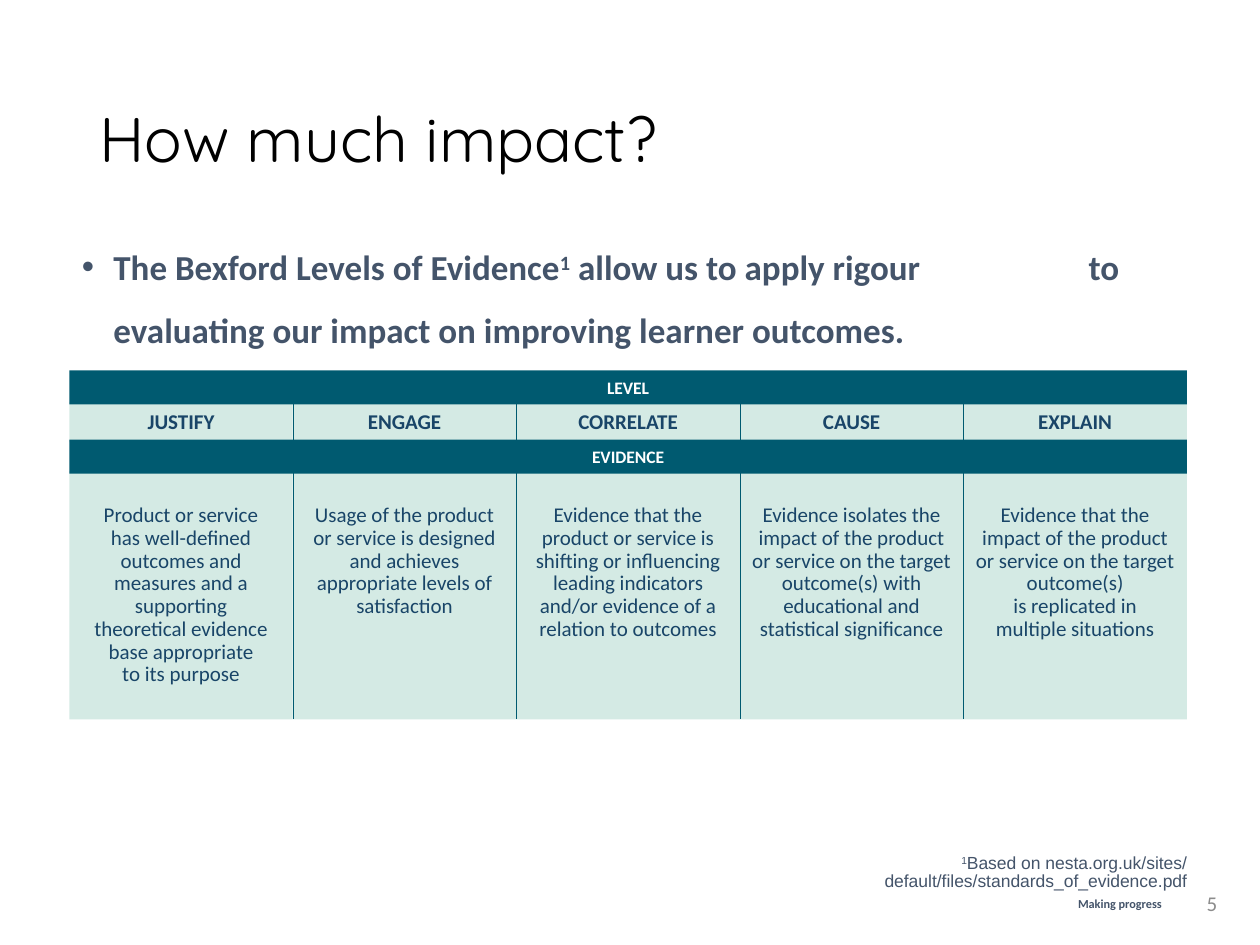
import pptx
import pptx.util
import pptx.dml.color
import pptx.enum.shapes
import pptx.enum.text
import pptx.oxml
import pptx.oxml.ns
from pptx.util import Inches

RGBColor = pptx.dml.color.RGBColor
ALIGN = pptx.enum.text.PP_ALIGN
ANCHOR = pptx.enum.text.MSO_ANCHOR

TEAL = RGBColor(0x00, 0x5A, 0x70)
MINT = RGBColor(0xD4, 0xEA, 0xE4)
NAVY = RGBColor(0x19, 0x45, 0x68)
SLATE = RGBColor(0x44, 0x54, 0x6A)
GREY = RGBColor(0x8C, 0x8C, 0x8C)
BLACK = RGBColor(0x00, 0x00, 0x00)
WHITE = RGBColor(0xFF, 0xFF, 0xFF)

TABLE_LEFT, TABLE_WIDTH = 0.55, 8.87
LEVELS = [
    ("JUSTIFY", ["Product or service",
                 "has well-defined outcomes and measures and a supporting",
                 "theoretical evidence", "base appropriate", "to its purpose"]),
    ("ENGAGE", ["Usage of the product or service is designed and achieves "
                "appropriate levels of satisfaction"]),
    ("CORRELATE", ["Evidence that the product or service is shifting or influencing "
                   "leading indicators and/or evidence of a", "relation to outcomes"]),
    ("CAUSE", ["Evidence isolates the impact of the product or service on the target "
               "outcome(s) with educational and statistical significance"]),
    ("EXPLAIN", ["Evidence that the impact of the product or service on the "
                 "target outcome(s)", "is replicated in multiple situations"]),
]
COLUMN_WIDTH = TABLE_WIDTH / len(LEVELS)


def place(shape, left, top, width, height):
    """Move and size a shape, in inches."""
    shape.left, shape.top = Inches(left), Inches(top)
    shape.width, shape.height = Inches(width), Inches(height)


def set_frame(shape, anchor, insets=(0.1, 0.05, 0.1, 0.05)):
    """Set wrapping, anchor and insets of a shape's text and return its frame."""
    frame = shape.text_frame
    frame.word_wrap = True
    frame.auto_size = pptx.enum.text.MSO_AUTO_SIZE.NONE
    frame.vertical_anchor = anchor
    (frame.margin_left, frame.margin_top,
     frame.margin_right, frame.margin_bottom) = map(Inches, insets)
    return frame


def format_paragraph(paragraph, size, color, bold=False, font="Calibri",
                     align=ALIGN.LEFT, spacing=None):
    """Set alignment, line spacing and font of a paragraph."""
    paragraph.alignment = align
    paragraph.line_spacing = spacing
    paragraph.font.name = font
    paragraph.font.size = pptx.util.Pt(size)
    paragraph.font.bold = bold
    paragraph.font.color.rgb = color


def add_run(paragraph, text, superscript=False):
    """Append a run, raised if it is a superscript."""
    run = paragraph.add_run()
    run.text = text
    if superscript:
        run.font._element.set("baseline", "30000")


def add_cell(slide, box, fill, lines, size, color, bold=False, spacing=None,
             anchor=ANCHOR.MIDDLE, insets=(0.1, 0, 0.1, 0)):
    """Add a filled rectangle with centred paragraphs."""
    shape = slide.shapes.add_shape(
        pptx.enum.shapes.MSO_SHAPE.RECTANGLE, *map(Inches, box))
    shape.shadow.inherit = False
    shape.fill.solid()
    shape.fill.fore_color.rgb = fill
    shape.line.fill.background()
    frame = set_frame(shape, anchor, insets)
    for index, line in enumerate(lines):
        paragraph = frame.add_paragraph() if index else frame.paragraphs[0]
        add_run(paragraph, line)
        format_paragraph(paragraph, size, color, bold, align=ALIGN.CENTER, spacing=spacing)


def add_divider(slide, x, top, bottom):
    """Add a thin vertical line between two columns."""
    line = slide.shapes.add_connector(
        pptx.enum.shapes.MSO_CONNECTOR.STRAIGHT,
        Inches(x), Inches(top), Inches(x), Inches(bottom))
    line.line.color.rgb = TEAL
    line.line.width = pptx.util.Pt(0.25)
    properties = line._element.spPr
    properties.append(pptx.oxml.parse_xml(
        f'<a:effectLst {pptx.oxml.ns.nsdecls("a")}/>'))


def add_text(slide, box, anchor, insets):
    """Add a text box and return its first paragraph."""
    shape = slide.shapes.add_textbox(*map(Inches, box))
    return set_frame(shape, anchor, insets).paragraphs[0]


def add_title(slide):
    """Fill the title placeholder."""
    title = slide.shapes.title
    place(title, 0.69, 0.4, 8.62, 1.45)
    paragraph = set_frame(title, ANCHOR.MIDDLE).paragraphs[0]
    add_run(paragraph, "How much impact?")
    format_paragraph(paragraph, 36, BLACK, font="Quicksand", spacing=0.9)


def add_statement(slide):
    """Fill the body placeholder with the bulleted statement."""
    body = slide.placeholders[1]
    place(body, TABLE_LEFT, 1.53, TABLE_WIDTH, 1.51)
    paragraph = set_frame(body, ANCHOR.MIDDLE).paragraphs[0]
    properties = paragraph._p.get_or_add_pPr()
    properties.set("marL", str(Inches(0.25)))
    properties.set("indent", str(-Inches(0.25)))
    namespace = pptx.oxml.ns.nsdecls("a")
    properties.append(pptx.oxml.parse_xml(f'<a:buChar {namespace} char="•"/>'))
    properties.append(pptx.oxml.parse_xml(
        f'<a:tabLst {namespace}><a:tab pos="{Inches(7.99)}" algn="l"/></a:tabLst>'))
    paragraph.space_before = pptx.util.Pt(0)
    add_run(paragraph, "The Bexford Levels of Evidence")
    add_run(paragraph, "1", superscript=True)
    add_run(paragraph, " allow us to apply rigour\tto evaluating our impact on "
                       "improving learner outcomes.")
    format_paragraph(paragraph, 20, SLATE, bold=True, spacing=1.5)


def add_levels(slide):
    """Add the grid of evidence levels."""
    spacing = pptx.util.Pt(13)
    for index, (name, evidence) in enumerate(LEVELS):
        left = TABLE_LEFT + index * COLUMN_WIDTH
        add_cell(slide, (left, 3.74, COLUMN_WIDTH, 1.97), MINT, evidence, 12, NAVY,
                 spacing=spacing, anchor=ANCHOR.TOP, insets=(0.1, 0.26, 0.1, 0.05))
        add_cell(slide, (left, 3.19, COLUMN_WIDTH, 0.32), MINT, [name], 12, NAVY,
                 bold=True, spacing=spacing)
    for heading, top in (("LEVEL", 2.94), ("EVIDENCE", 3.49)):
        add_cell(slide, (TABLE_LEFT, top, TABLE_WIDTH, 0.27), TEAL, [heading], 10, WHITE,
                 bold=True)
    for index in range(1, len(LEVELS)):
        add_divider(slide, TABLE_LEFT + index * COLUMN_WIDTH, 3.05, 5.71)


def add_footer(slide):
    """Add the slide number, footer and source note."""
    number = add_text(slide, (9.29, 7.1, 0.47, 0.14), ANCHOR.MIDDLE, (0.1, 0.05, 0.1, 0.05))
    add_run(number, "5")
    format_paragraph(number, 12, GREY, align=ALIGN.RIGHT)

    footer = add_text(slide, (6.88, 7.1, 2.34, 0.13), ANCHOR.BOTTOM, (0, 0, 0, 0))
    add_run(footer, "Making progress")
    format_paragraph(footer, 7, SLATE, bold=True, align=ALIGN.RIGHT)

    note = add_text(slide, (5.81, 6.79, 3.61, 0.28), ANCHOR.TOP, (0, 0, 0, 0))
    add_run(note, "1", superscript=True)
    add_run(note, "Based on nesta.org.uk/sites/")
    note.add_line_break()
    add_run(note, "default/files/standards_of_evidence.pdf")
    format_paragraph(note, 10, SLATE, font="Arial", align=ALIGN.RIGHT,
                     spacing=pptx.util.Pt(10))


def main():
    """Build and save the slide."""
    presentation = pptx.Presentation()
    presentation.slide_width, presentation.slide_height = Inches(10), Inches(7.5)
    slide = presentation.slides.add_slide(presentation.slide_layouts[1])
    add_title(slide)
    add_statement(slide)
    add_levels(slide)
    add_footer(slide)
    presentation.save("out.pptx")


if __name__ == "__main__":
    main()
